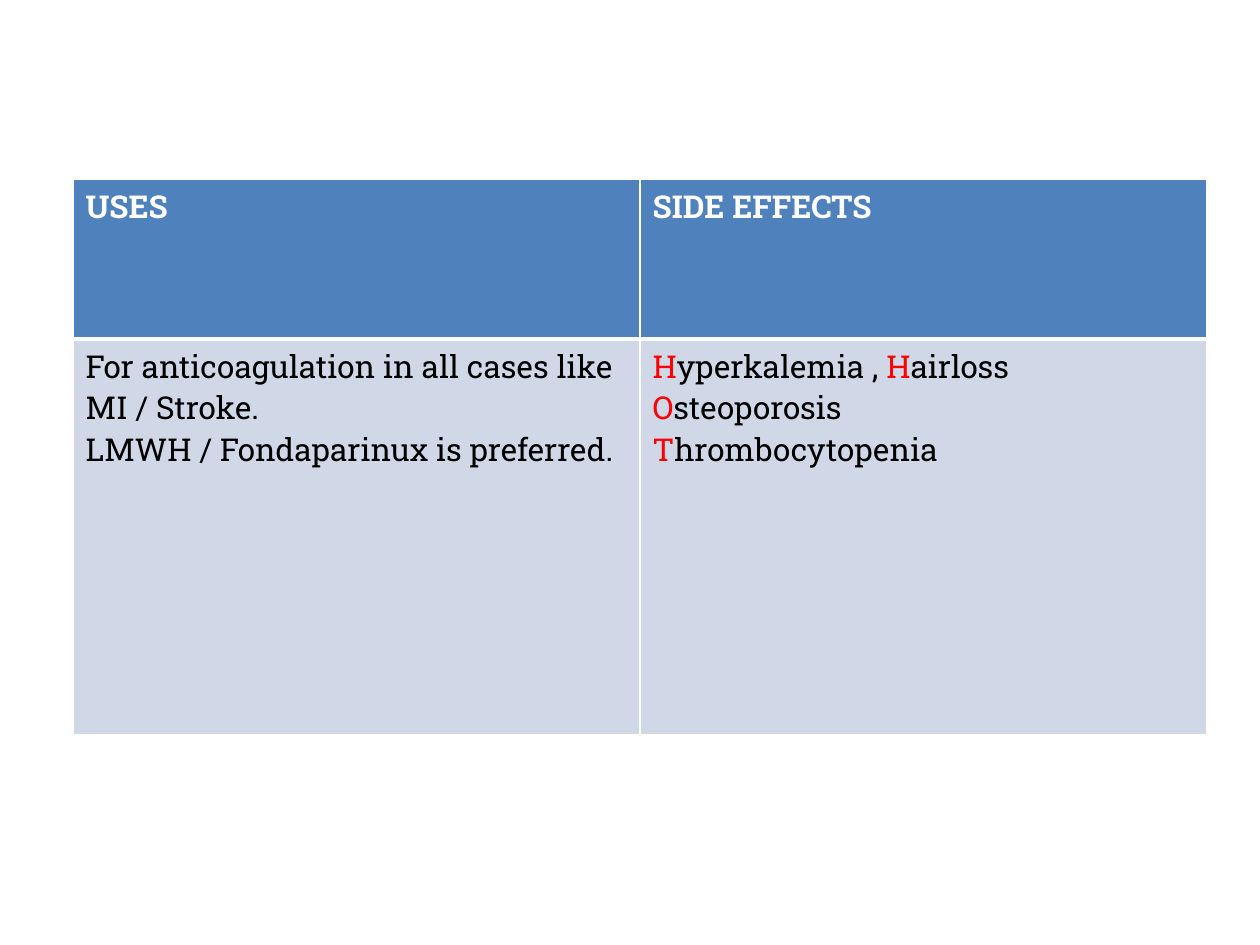
from itertools import groupby

from lxml.etree import SubElement
from pptx import Presentation
from pptx.dml.color import RGBColor
from pptx.oxml.ns import qn
from pptx.util import Inches, Pt

FONT = "Roboto Slab"
WHITE, BLACK, RED = "FFFFFF", "000000", "FF0000"
BLUE, PALE = "4F81BD", "D0D8E8"

HEADS = ["USES", "SIDE EFFECTS"]
USES = ["For anticoagulation in all cases like MI / Stroke.",
        "LMWH / Fondaparinux is preferred."]
EFFECTS = ["Hyperkalemia , Hairloss", "Osteoporosis", "Thrombocytopenia"]


def color(code):
    return RGBColor.from_string(code)


def add_run(para, text, code, bold):
    run = para.add_run()
    run.text = text
    style = {"name": FONT, "size": Pt(18), "bold": bold}
    for key, value in style.items():
        setattr(run.font, key, value)
    run.font.color.rgb = color(code)


def split(line, code, accent):
    """Yield text and colour, with capitals in the accent colour if given."""
    if not accent:
        yield line, code
        return
    for upper, chars in groupby(line, str.isupper):
        yield "".join(chars), accent if upper else code


def add_border(cell, widths):
    props = cell._tc.get_or_add_tcPr()
    for side, width in widths.items():
        line = SubElement(props, qn(f"a:ln{side}"), w=str(Pt(width)))
        fill = SubElement(line, qn("a:solidFill"))
        SubElement(fill, qn("a:srgbClr"), val=WHITE)


def fill_cell(cell, lines, back, code, widths, bold=False, accent=None):
    # Borders come before the fill in the cell properties
    add_border(cell, widths)
    cell.fill.solid()
    cell.fill.fore_color.rgb = color(back)
    frame = cell.text_frame
    for i, line in enumerate(lines):
        para = frame.add_paragraph() if i else frame.paragraphs[0]
        for text, shade in split(line, code, accent):
            add_run(para, text, shade, bold)


def add_grid(slide, left, top, width, heights):
    frame = slide.shapes.add_table(2, 2, Inches(left), Inches(top),
                                   Inches(width), Inches(sum(heights)))
    table = frame.table
    for col in table.columns:
        col.width = Inches(width / 2)
    for row, height in zip(table.rows, heights):
        row.height = Inches(height)

    # Header row, with a thick rule below it
    for i, head in enumerate(HEADS):
        fill_cell(table.cell(0, i), [head], BLUE, WHITE,
                  {"L": 1, "R": 1, "T": 1, "B": 3}, bold=True)

    # Body row, with the initials of the side effects in red
    for i, (lines, accent) in enumerate([(USES, None), (EFFECTS, RED)]):
        fill_cell(table.cell(1, i), lines, PALE, BLACK,
                  {"L": 1, "R": 1, "T": 3, "B": 1}, accent=accent)


def main():
    deck = Presentation()
    deck.slide_width, deck.slide_height = Inches(10), Inches(7.5)
    slide = deck.slides.add_slide(deck.slide_layouts[6])
    add_grid(slide, 0.58, 1.42, 9, [1.27, 3.14])
    deck.save("out.pptx")


if __name__ == "__main__":
    main()
